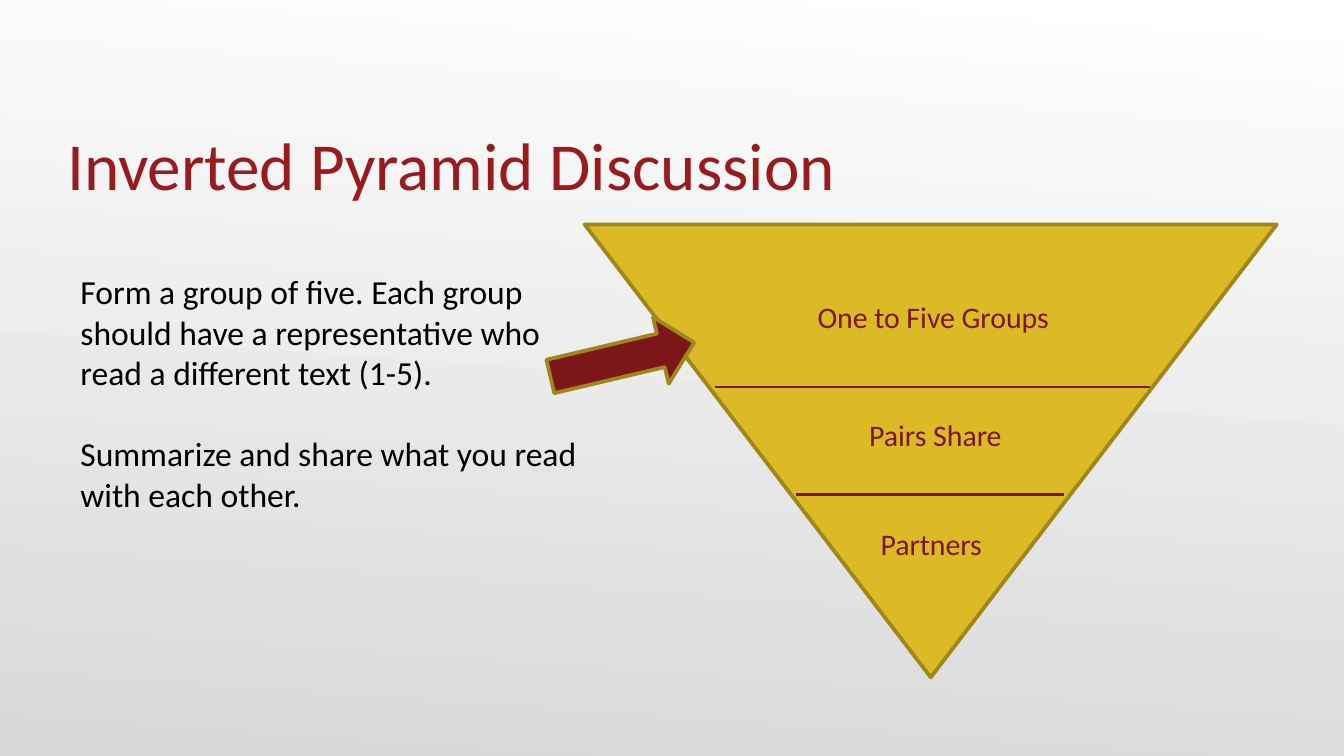
from lxml import etree
from pptx import Presentation
from pptx.dml.color import RGBColor
from pptx.enum.shapes import MSO_CONNECTOR, MSO_SHAPE
from pptx.enum.text import MSO_ANCHOR, PP_ALIGN
from pptx.oxml.ns import qn
from pptx.util import Inches, Pt

TRIANGLE = MSO_SHAPE.ISOSCELES_TRIANGLE
ARROW = MSO_SHAPE.RIGHT_ARROW
STRAIGHT = MSO_CONNECTOR.STRAIGHT
TOP, BOTTOM = MSO_ANCHOR.TOP, MSO_ANCHOR.BOTTOM
LEFT, CENTER = PP_ALIGN.LEFT, PP_ALIGN.CENTER

FONT = "Calibri"
RED, MAROON = "991B1E", "7D1619"
GOLD, OLIVE = "DCBA25", "A0871B"
BLACK, WHITE, GRAY = "000000", "FFFFFF", "D8D8D8"

TIERS = [
    ("One to Five Groups", 5.36, 2.17, 3.17),
    ("Pairs Share", 5.8, 3.05, 2.32),
    ("Partners", 6.28, 3.86, 1.3),
]
RULES = [(5.32, 8.56, 2.88), (5.92, 7.92, 3.68)]


def color(code):
    return RGBColor.from_string(code)


def shade(slide):
    fill = slide.background.fill
    fill.gradient()
    fill.gradient_angle = 266
    for stop, code in zip(fill.gradient_stops, (WHITE, GRAY)):
        stop.color.rgb = color(code)


def add_text(slide, box, *lines, size=16, ink=MAROON, align=LEFT,
             anchor=TOP, inset=0.1, foot=0.05, gap=0):
    frame = slide.shapes.add_textbox(*map(Inches, box)).text_frame
    frame.word_wrap = True
    frame.vertical_anchor = anchor
    frame.margin_left = frame.margin_right = Inches(inset)
    frame.margin_top, frame.margin_bottom = Inches(0.05), Inches(foot)
    for i, line in enumerate(lines):
        para = frame.add_paragraph() if i else frame.paragraphs[0]
        para.text = line
        para.alignment = align
        para.space_before = Pt(gap if i else 0)
        para.font.name = FONT
        para.font.size = Pt(size)
        para.font.color.rgb = color(ink)


def add_block(slide, kind, box, fill, turn, *points):
    shape = slide.shapes.add_shape(kind, *map(Inches, box))
    shape.shadow.inherit = False
    shape.rotation = turn
    for i, point in enumerate(points):
        shape.adjustments[i] = point
    shape.fill.solid()
    shape.fill.fore_color.rgb = color(fill)
    shape.line.color.rgb = color(OLIVE)
    shape.line.width = Pt(2)


def add_rule(slide, start, end, y):
    rule = slide.shapes.add_connector(
        STRAIGHT, Inches(start), Inches(y), Inches(end), Inches(y))
    rule.line.color.rgb = color(MAROON)
    rule.line.width = Pt(1.5)
    etree.SubElement(rule._element.spPr, qn("a:effectLst"))


def main():
    deck = Presentation()
    deck.slide_width = Inches(10)
    deck.slide_height = Inches(10 * 9 / 16)
    slide = deck.slides.add_slide(deck.slide_layouts[6])
    shade(slide)
    add_text(slide, (0.5, 0.58, 9, 0.94), "Inverted Pyramid Discussion",
             size=36, ink=RED, anchor=BOTTOM, inset=0, foot=0)
    add_block(slide, TRIANGLE, (4.35, 1.67, 5.15, 3.37), GOLD, 180, 0.5)
    add_text(slide, (0.5, 1.97, 4.13, 1.92),
             "Form a group of five. Each group should have a representative "
             "who read a different text (1-5).",
             "Summarize and share what you read with each other.",
             size=18, ink=BLACK, gap=22)
    add_block(slide, ARROW, (4.08, 2.42, 1.1, 0.51), MAROON, 346.7, 0.5, 0.5)
    for start, end, y in RULES:
        add_rule(slide, start, end, y)
    for label, x, y, width in TIERS:
        add_text(slide, (x, y, width, 0.37), label, align=CENTER)
    deck.save("out.pptx")


if __name__ == "__main__":
    main()
